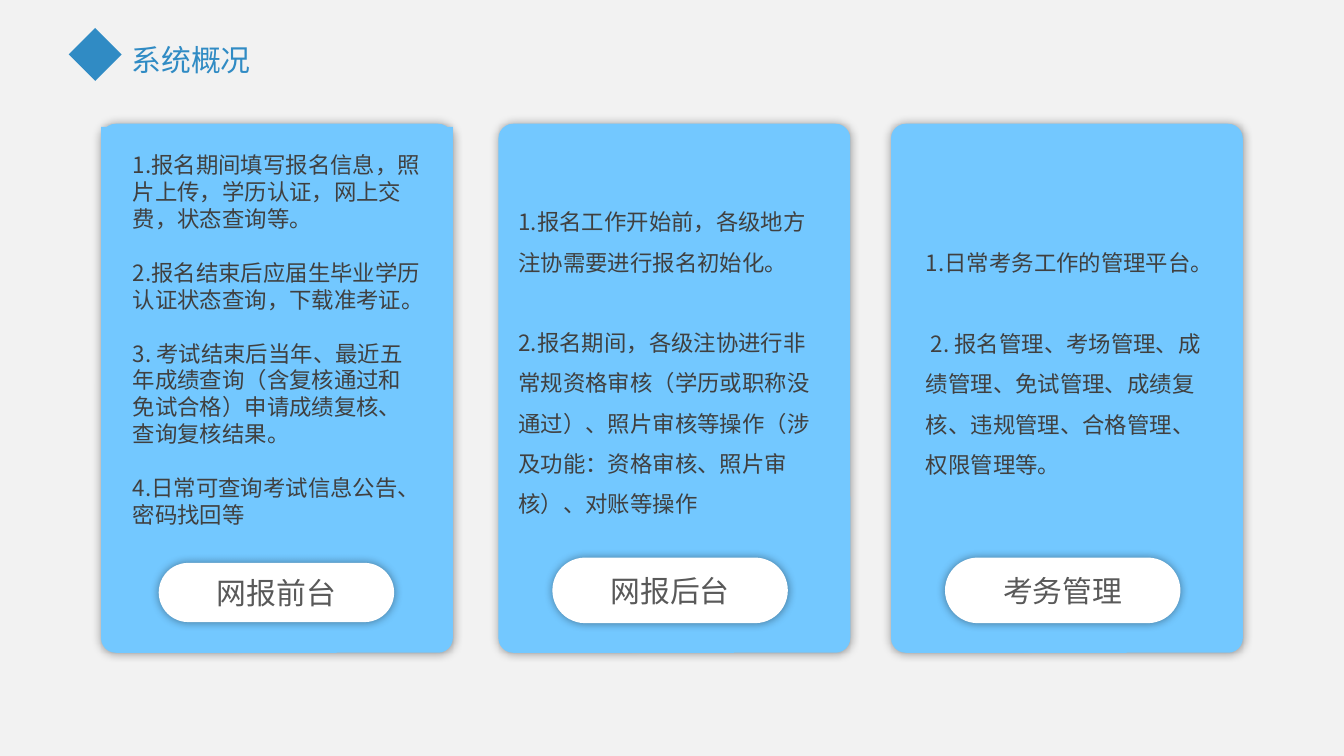
from dataclasses import dataclass
from lxml.etree import SubElement as Sub
from pptx import Presentation
from pptx.dml.color import RGBColor as Rgb
from pptx.enum.shapes import MSO_SHAPE as Geo
from pptx.enum.text import MSO_ANCHOR as Anchor, PP_ALIGN as Align
from pptx.oxml.ns import qn
from pptx.util import Cm, Pt


@dataclass(frozen=True)
class Theme:
    back: str = "F2F2F2"
    blue: str = "308BC4"
    sky: str = "73C8FF"
    white: str = "FFFFFF"
    ink: str = "404040"
    gray: str = "595959"
    shade: str = "000000"
    font: str = "Noto Sans CJK SC"
    latin: str = "Calibri"
    head: int = 16
    body: int = 12
    line: float = 14.4


THEME = Theme()
CARD_TOP, CARD_W, CARD_H = 2.34, 6.65, 10
PILL_W = 4.45

CARDS = [
    dict(left=1.91, label="网报前台", pill=(3, 10.64, PILL_W, 1.12),
         box=(2.26, 2.74, 5.97, 7.44), pad=0.25, lead=1, items=[
             "1.报名期间填写报名信息，照片上传，学历认证，网上交费，状态查询等。",
             "2.报名结束后应届生毕业学历认证状态查询，下载准考证。",
             "3. 考试结束后当年、最近五年成绩查询（含复核通过和免试合格）申请成绩复核、查询复核结果。",
             "4.日常可查询考试信息公告、密码找回等"]),
    dict(left=9.42, label="网报后台", pill=(10.44, 10.54, PILL_W, 1.24),
         box=(9.7, 3.56, 5.99, 7.19), pad=0.1, lead=1.5, items=[
             "1.报名工作开始前，各级地方注协需要进行报名初始化。",
             "2.报名期间，各级注协进行非常规资格审核（学历或职称没通过）、照片审核等操作（涉及功能：资格审核、照片审核）、对账等操作"]),
    dict(left=16.84, label="考务管理", pill=(17.86, 10.54, PILL_W, 1.24),
         box=(17.4, 4.34, 5.41, 4.88), pad=0.1, lead=1.5, items=[
             "1.日常考务工作的管理平台。",
             " 2. 报名管理、考场管理、成绩管理、免试管理、成绩复核、违规管理、合格管理、权限管理等。"]),
]


def add_run(para, text, size, color, font):
    run = para.add_run()
    run.text = text
    run.font.size = Pt(size)
    run.font.name = font
    run.font.color.rgb = Rgb.from_string(color)
    if font == THEME.font:
        Sub(run.font._element, qn("a:ea"), typeface=font)


def add_form(slide, geo, box, color, turn=None):
    form = slide.shapes.add_shape(geo, *map(Cm, box))
    form.shadow.inherit = False
    form.fill.solid()
    form.fill.fore_color.rgb = Rgb.from_string(color)
    form.line.fill.background()
    if turn is not None:
        form.adjustments[0] = turn
    return form


def add_glow(form):
    glow = Sub(form._element.spPr.find(qn("a:effectLst")), qn("a:outerShdw"),
               blurRad=str(Pt(5)), dist="0", dir="0", algn="ctr", rotWithShape="0")
    tint = Sub(glow, qn("a:srgbClr"), val=THEME.shade)
    Sub(tint, qn("a:alpha"), val="40000")


def add_text(slide, box, items, size, color, pad, lead=1):
    frame = slide.shapes.add_textbox(*map(Cm, box)).text_frame
    frame.word_wrap = True
    frame.margin_left = frame.margin_right = Cm(pad)
    for rank, item in enumerate(items):
        para = frame.add_paragraph() if rank else frame.paragraphs[0]
        para.line_spacing = float(lead)
        if rank:
            para.space_before = Pt(THEME.line * lead)
        add_run(para, item, size, color, THEME.font)
    return frame


def add_pill(slide, box, label):
    pill = add_form(slide, Geo.ROUNDED_RECTANGLE, box, THEME.white, 0.5)
    add_glow(pill)
    pill.text_frame.vertical_anchor = Anchor.MIDDLE
    para = pill.text_frame.paragraphs[0]
    para.alignment = Align.CENTER
    add_run(para, label, THEME.head, THEME.gray, THEME.latin)


def add_card(slide, card):
    box = (card["left"], CARD_TOP, CARD_W, CARD_H)
    add_glow(add_form(slide, Geo.ROUNDED_RECTANGLE, box, THEME.sky, 0.042))
    if card is CARDS[0]:
        add_form(slide, Geo.RECTANGLE, (card["left"], 2.4, CARD_W, 0.84), THEME.sky)
    add_text(slide, card["box"], card["items"], THEME.body, THEME.ink,
             card["pad"], card["lead"])
    add_pill(slide, card["pill"], card["label"])


def main():
    deck = Presentation()
    deck.slide_width, deck.slide_height = Cm(25.4), Cm(14.29)
    slide = deck.slides.add_slide(deck.slide_layouts[6])
    fill = slide.background.fill
    fill.solid()
    fill.fore_color.rgb = Rgb.from_string(THEME.back)
    title = add_text(slide, (2.31, 0.69, 4.98, 0.86), ["系统概况"],
                     THEME.head, THEME.blue, 0.18)
    title.margin_top = title.margin_bottom = Cm(0.1)
    add_form(slide, Geo.DIAMOND, (1.3, 0.53, 1, 1), THEME.blue)
    for card in CARDS:
        add_card(slide, card)
    deck.save("out.pptx")


if __name__ == "__main__":
    main()
